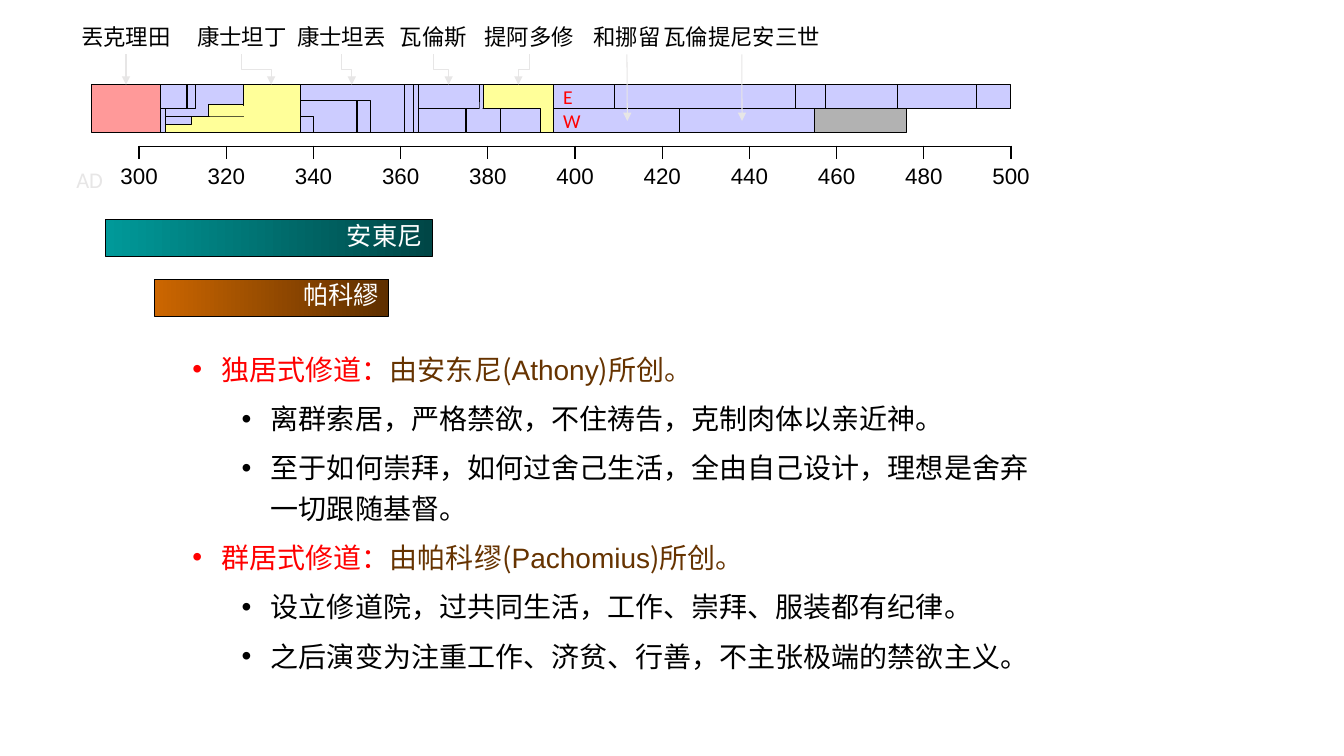
from dataclasses import dataclass

from lxml import etree
from pptx import Presentation
from pptx.dml.color import RGBColor
from pptx.enum.shapes import MSO_CONNECTOR, MSO_SHAPE
from pptx.enum.text import MSO_ANCHOR, MSO_AUTO_SIZE, PP_ALIGN
from pptx.oxml.ns import qn
from pptx.util import Emu, Inches, Pt

RECT = MSO_SHAPE.RECTANGLE
STRAIGHT, ELBOW = MSO_CONNECTOR.STRAIGHT, MSO_CONNECTOR.ELBOW
TOP, MIDDLE = MSO_ANCHOR.TOP, MSO_ANCHOR.MIDDLE
LEFT, CENTER, RIGHT = PP_ALIGN.LEFT, PP_ALIGN.CENTER, PP_ALIGN.RIGHT
FIT = MSO_AUTO_SIZE.SHAPE_TO_FIT_TEXT


@dataclass(frozen=True)
class Theme:
    black: str = "000000"
    white: str = "FFFFFF"
    red: str = "FF0000"
    brown: str = "663300"
    pale: str = "E7E6E6"
    lilac: str = "CCCCFF"
    yellow: str = "FFFF99"
    pink: str = "FF9999"
    grey: str = "B2B2B2"
    teal: tuple = ("009999", "004646")
    orange: tuple = ("CC6600", "5E2F00")
    label_font: str = "Calibri"
    latin_font: str = "Arial"
    body_font: str = "Noto Sans CJK SC"
    mark_size: int = 14
    label_size: int = 16
    bar_size: int = 18
    body_size: int = 20
    hairline: float = 0.75


T = Theme()

# Time scale: AXIS_X is the year 300; a reign band is six rows high.
AXIS_X, DECADE = 1.38, 0.4325
BAND_Y, ROW = 0.84, 0.079
LABEL_Y, LABEL_H = 0.19, 0.35

# first year, last year, first row, last row, fill, mark
REIGNS = [
    (305, 306, 3, 6, T.lilac, ""), (289, 305, 0, 6, T.pink, ""),
    (337, 361, 0, 6, T.lilac, ""), (361, 363, 0, 6, T.lilac, ""),
    (363, 364, 0, 6, T.lilac, ""), (395, 424, 3, 6, T.lilac, "W"),
    (424, 455, 3, 6, T.lilac, ""), (455, 476, 3, 6, T.grey, ""),
    (306, 337, 0, 6, T.yellow, ""), (306, 312, 4, 5, T.lilac, ""),
    (306, 324, 0, 4, T.lilac, ""), (311, 313, 0, 3, T.lilac, ""),
    (305, 311, 0, 3, T.lilac, ""), (395, 409, 0, 3, T.lilac, "E"),
    (409, 450.5, 0, 3, T.lilac, ""), (450.5, 457.5, 0, 3, T.lilac, ""),
    (457.5, 474, 0, 3, T.lilac, ""), (474, 492, 0, 3, T.lilac, ""),
    (492, 500, 0, 3, T.lilac, ""), (316, 324, 2.5, 4, T.yellow, ""),
    (364, 378, 0, 3, T.lilac, ""), (364, 375, 3, 6, T.lilac, ""),
    (379, 395, 0, 6, T.yellow, ""), (375, 383, 3, 6, T.lilac, ""),
    (378, 379, 0, 3, T.lilac, ""), (383, 392, 3, 6, T.lilac, ""),
    (337, 350, 2, 6, T.lilac, ""), (350, 353, 2, 6, T.lilac, ""),
    (337, 340, 4, 6, T.lilac, ""),
]
# name, label centre, label width, year and row the arrow points to
EMPERORS = [
    ("丟克理田", 1.25, 0.89, 297, 0), ("康士坦丁", 2.4, 0.89, 330.3, 0),
    ("康士坦丟", 3.39, 0.89, 348.8, 0), ("瓦倫斯", 4.3, 0.67, 371, 0),
    ("提阿多修", 5.25, 0.89, 387, 0), ("和挪留", 6.22, 0.67, 412, 4.56),
    ("瓦倫提尼安三世", 7.36, 1.56, 438.3, 4.56),
]
# name, birth, death, top, gradient
MONKS = [("安東尼", 292.4, 367.3, 2.18, T.teal),
         ("帕科繆", 303.5, 357.3, 2.77, T.orange)]
# heading, founder's name, points
MONASTICISM = [
    ("独居式修道：", "由安东尼(", "Athony",
     ["离群索居，严格禁欲，不住祷告，克制肉体以亲近神。",
      "至于如何崇拜，如何过舍己生活，全由自己设计，理想是舍弃一切跟随基督。"]),
    ("群居式修道：", "由帕科缪(", "Pachomius",
     ["设立修道院，过共同生活，工作、崇拜、服装都有纪律。",
      "之后演变为注重工作、济贫、行善，不主张极端的禁欲主义。"]),
]


def year_x(year):
    return AXIS_X + (year - 300) / 10 * DECADE


def row_y(row):
    return BAND_Y + row * ROW


def rgb(color):
    return RGBColor.from_string(color)


def style(r, size, color, font=T.label_font):
    r.font.size, r.font.name = Pt(size), font
    r.font.color.rgb = rgb(color)


def write(tf, text, size, color, align, anchor=MIDDLE):
    tf.text = text
    tf.word_wrap, tf.vertical_anchor = False, anchor
    p = tf.paragraphs[0]
    p.alignment = align
    style(p.runs[0], size, color)
    return p


def add_rect(s, x, y, w, h, fill, outlined=True):
    """Draw a rectangle; a pair of fills makes a gradient from left to right."""
    sp = s.shapes.add_shape(RECT, Inches(x), Inches(y), Inches(w), Inches(h))
    sp.shadow.inherit = False
    if isinstance(fill, tuple):
        sp.fill.gradient()
        sp.fill.gradient_angle = 0
        for stop, color in zip(sp.fill.gradient_stops, fill):
            stop.color.rgb = rgb(color)
    else:
        sp.fill.solid()
        sp.fill.fore_color.rgb = rgb(fill)
    if outlined:
        sp.line.color.rgb, sp.line.width = rgb(T.black), Pt(T.hairline)
    else:
        sp.line.fill.background()
    return sp


def add_span(s, start, end, top, bottom, fill, mark="", outlined=True):
    sp = add_rect(s, year_x(start), row_y(top), (end - start) / 10 * DECADE,
                  (bottom - top) * ROW, fill, outlined)
    if mark:
        write(sp.text_frame, mark, T.mark_size, T.red, LEFT)
    return sp


def add_label(s, text, x, y, w, color=T.black):
    sp = s.shapes.add_textbox(Inches(x), Inches(y), Inches(w), Inches(LABEL_H))
    tf = sp.text_frame
    tf.margin_left = tf.margin_right = 0
    tf.margin_top = tf.margin_bottom = Inches(0.04)
    write(tf, text, T.label_size, color, CENTER)
    tf.auto_size = FIT
    return sp


def add_arrow(s, label, x1, x2, y2, target=None):
    """Lead from below a label to a point, bending halfway if not straight."""
    y1 = LABEL_Y + LABEL_H
    dx, dy = x2 - x1, y2 - y1
    if abs(dx) < 0.05:
        c = s.shapes.add_connector(STRAIGHT, Inches(x1), Inches(y1),
                                   Inches(x2), Inches(y2))
        c.begin_connect(label, 2)
        if target is not None:
            c.end_connect(target, 0)
    else:
        x, y = (x1 + x2 - dy) / 2, (y1 + y2 - abs(dx)) / 2
        c = s.shapes.add_connector(ELBOW, Inches(x), Inches(y),
                                   Inches(x + dy), Inches(y + abs(dx)))
        xfrm = c._element.spPr.find(qn("a:xfrm"))
        xfrm.set("rot", str((270 if dx > 0 else 90) * 60000))
        if dx > 0:
            xfrm.set("flipH", "1")
    c.line.color.rgb, c.line.width = rgb(T.pale), Pt(T.hairline)
    etree.SubElement(c.line._get_or_add_ln(), qn("a:tailEnd"), type="triangle")
    etree.SubElement(c._element.spPr, qn("a:effectLst"))


def set_borders(cell, sides, color):
    tc_pr = cell._tc.get_or_add_tcPr()
    for i, side in enumerate(sides):
        ln = etree.Element(qn(f"a:ln{side}"), w=str(Pt(1)))
        fill = etree.SubElement(ln, qn("a:solidFill"))
        etree.SubElement(fill, qn("a:srgbClr"), val=color)
        tc_pr.insert(i, ln)


def add_strip(s, x, y, h, texts, sides, border, fill=None):
    """Add a one-row table whose columns are twenty years wide."""
    n = len(texts)
    table = s.shapes.add_table(1, n, Inches(x), Inches(y),
                               Inches(2 * DECADE * n), Inches(h)).table
    table.first_row = table.horz_banding = False
    for cell, text in zip(table.rows[0].cells, texts):
        cell.fill.background()
        if fill:
            cell.fill.solid()
            cell.fill.fore_color.rgb = rgb(fill)
        set_borders(cell, sides, border)
        if text:
            cell.text = text
            p = cell.text_frame.paragraphs[0]
            p.alignment = CENTER
            style(p.runs[0], T.label_size, T.black, T.latin_font)


def add_bullet(p, level, parts):
    p.level, p.line_spacing, p.space_after = level, 1.2, Pt(6.4)
    p_pr = p._p.get_or_add_pPr()
    p_pr.set("marL", str(Inches((0.29, 0.78)[level])))
    p_pr.set("indent", str(Inches(-0.29)))
    etree.SubElement(p_pr, qn("a:buFont"), typeface=T.latin_font)
    etree.SubElement(p_pr, qn("a:buChar"), char="•")
    for text, color, font in parts:
        r = p.add_run()
        r.text = text
        style(r, T.body_size, color, font)


def add_body(s, x, y, w, h):
    tf = s.shapes.add_textbox(Inches(x), Inches(y), Inches(w), Inches(h)).text_frame
    tf.word_wrap, tf.auto_size = True, FIT
    bullets = []
    for heading, founded, founder, points in MONASTICISM:
        bullets.append((0, [(heading, T.red, T.body_font),
                            (founded, T.brown, T.body_font),
                            (founder, T.brown, T.latin_font),
                            (")所创。", T.brown, T.body_font)]))
        bullets += [(1, [(point, T.black, T.body_font)]) for point in points]
    for i, (level, parts) in enumerate(bullets):
        add_bullet(tf.add_paragraph() if i else tf.paragraphs[0], level, parts)


def main():
    prs = Presentation()
    prs.slide_width, prs.slide_height = Emu(12192000), Inches(7.5)
    s = prs.slides.add_slide(prs.slide_layouts[6])
    add_strip(s, AXIS_X, 1.45, 0.4, [""] * 10, "LRTB", T.black)
    add_strip(s, AXIS_X - DECADE, 1.58, 0.37,
              [str(year) for year in range(300, 501, 20)], "TB", T.white, T.white)
    add_label(s, "AD", 0.74, 1.61, 0.3, T.pale)
    reigns = {}
    for reign in REIGNS:
        reigns[reign[0], reign[1]] = add_span(s, *reign)
    add_span(s, 316.2, 324.4, 2.65, 4, T.yellow, outlined=False)
    add_span(s, 378.1, 378.8, 2.2, 3.1, T.lilac, outlined=False)
    for name, x, w, year, row in EMPERORS:
        label = add_label(s, name, x - w / 2, LABEL_Y, w)
        target = reigns[289, 305] if year == 297 else None
        add_arrow(s, label, x, year_x(year), row_y(row), target)
    for name, birth, death, y, fill in MONKS:
        sp = add_rect(s, year_x(birth), y, (death - birth) / 10 * DECADE, 0.37, fill)
        p = write(sp.text_frame, name, T.bar_size, T.white, RIGHT, TOP)
        p.line_spacing = 0.85
    add_body(s, 1.81, 3.38, 8.63, 3.4)
    prs.save("out.pptx")


if __name__ == "__main__":
    main()
